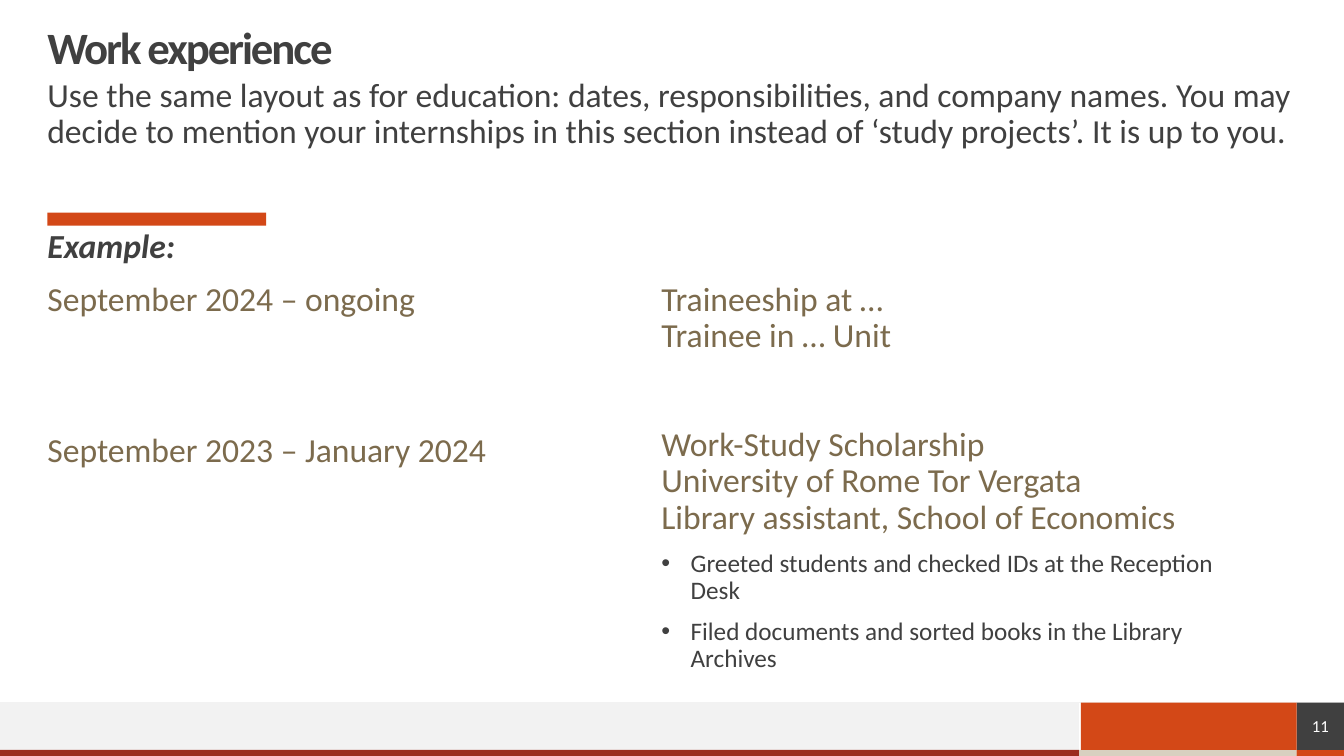
from dataclasses import dataclass, field

import pptx
import pptx.dml.color
import pptx.enum.shapes
import pptx.enum.text
import pptx.oxml
import pptx.oxml.ns
import pptx.util

RGB = pptx.dml.color.RGBColor
ALIGN = pptx.enum.text.PP_ALIGN
ANCHOR = pptx.enum.text.MSO_ANCHOR

ORANGE = RGB(0xD3, 0x48, 0x17)
BRICK = RGB(0x9B, 0x2D, 0x1F)
SAND = RGB(0xD8, 0xD0, 0xC0)
MIST = RGB(0xF2, 0xF2, 0xF2)
CHARCOAL = RGB(0x40, 0x40, 0x40)
UMBER = RGB(0x7C, 0x6B, 0x4D)
WHITE = RGB(0xFF, 0xFF, 0xFF)

EMU_PER_PX = 9144
SLIDE_WIDTH, SLIDE_HEIGHT = 1333, 750
MARGIN = 47
FOOTER_TOP, STRIP_TOP = 697, 744
FOOTER_HEIGHT, STRIP_HEIGHT = STRIP_TOP - FOOTER_TOP, SLIDE_HEIGHT - STRIP_TOP
BAND_END, NUMBER_LEFT = 1070, 1286
BULLET_INDENT = 29


@dataclass(frozen=True)
class Box:
    left: int
    top: int
    width: int
    height: int


@dataclass(frozen=True)
class Block:
    box: Box
    color: RGB


@dataclass(frozen=True)
class Line:
    text: str
    color: RGB = UMBER
    size: int = 24
    before: int = 0
    bullet: bool = False
    tracking: int = 0
    line_spacing: float = 0.9
    align: ALIGN = ALIGN.LEFT
    style: dict[str, bool] = field(default_factory=dict)


@dataclass(frozen=True)
class Passage:
    box: Box
    lines: list[Line]
    anchor: ANCHOR = ANCHOR.TOP


def px(length: int) -> pptx.util.Emu:
    return pptx.util.Emu(length * EMU_PER_PX)


def place(box: Box) -> tuple[pptx.util.Emu, ...]:
    return px(box.left), px(box.top), px(box.width), px(box.height)


def apply(target: object, values: dict[str, object]) -> None:
    for name, value in values.items():
        setattr(target, name, value)


def draw_block(slide: pptx.slide.Slide, block: Block) -> None:
    rectangle = slide.shapes.add_shape(
        pptx.enum.shapes.MSO_SHAPE.RECTANGLE, *place(block.box)
    )
    rectangle.shadow.inherit = False
    rectangle.fill.solid()
    rectangle.fill.fore_color.rgb = block.color
    rectangle.line.fill.background()


def draw_footer_rule(slide: pptx.slide.Slide) -> None:
    rule = slide.shapes.add_connector(
        pptx.enum.shapes.MSO_CONNECTOR.STRAIGHT,
        px(SLIDE_WIDTH), px(FOOTER_TOP), px(0), px(FOOTER_TOP),
    )
    rule.line.color.rgb = MIST
    rule.line.width = pptx.util.Pt(0.5)
    properties = rule._element.spPr
    properties.append(properties.makeelement(pptx.oxml.ns.qn("a:effectLst"), {}))


def add_bullet(paragraph: pptx.text.text._Paragraph) -> None:
    properties = paragraph._p.get_or_add_pPr()
    properties.set("marL", str(px(BULLET_INDENT)))
    properties.set("indent", str(px(-BULLET_INDENT)))
    for tag, key, value in (("a:buFont", "typeface", "Arial"), ("a:buChar", "char", "•")):
        properties.append(
            properties.makeelement(pptx.oxml.ns.qn(tag), {key: value})
        )


def write_passage(slide: pptx.slide.Slide, passage: Passage) -> None:
    frame = slide.shapes.add_textbox(*place(passage.box)).text_frame
    apply(frame, {
        "word_wrap": True,
        "vertical_anchor": passage.anchor,
        "margin_left": 0,
        "margin_top": 0,
        "margin_right": 0,
        "margin_bottom": 0,
    })
    for index, line in enumerate(passage.lines):
        paragraph = frame.add_paragraph() if index else frame.paragraphs[0]
        apply(paragraph, {
            "alignment": line.align,
            "line_spacing": line.line_spacing,
            "space_before": pptx.util.Pt(line.before),
        })
        if line.bullet:
            add_bullet(paragraph)
        run = paragraph.add_run()
        run.text = line.text
        apply(run.font, {"name": "Calibri", "size": pptx.util.Pt(line.size), **line.style})
        run.font.color.rgb = line.color
        if line.tracking:
            run._r.get_or_add_rPr().set("spc", str(line.tracking))


FOOTER_BAND = Block(Box(0, FOOTER_TOP, BAND_END, FOOTER_HEIGHT), MIST)
NUMBER_BOX = Box(NUMBER_LEFT, FOOTER_TOP, SLIDE_WIDTH - NUMBER_LEFT, FOOTER_HEIGHT)
BLOCKS = [
    Block(Box(BAND_END, STRIP_TOP, NUMBER_LEFT - BAND_END, STRIP_HEIGHT), SAND),
    Block(Box(0, STRIP_TOP, BAND_END, STRIP_HEIGHT), BRICK),
    Block(Box(NUMBER_LEFT, STRIP_TOP, SLIDE_WIDTH - NUMBER_LEFT, STRIP_HEIGHT), ORANGE),
    Block(Box(MARGIN, 211, 217, 13), ORANGE),
    Block(NUMBER_BOX, CHARCOAL),
    Block(Box(1072, FOOTER_TOP, NUMBER_LEFT - 1072, FOOTER_HEIGHT), ORANGE),
]

PASSAGES = [
    Passage(
        Box(MARGIN, 26, 1240, 47),
        [Line("Work experience", CHARCOAL, 32, tracking=-150, style={"bold": True})],
        ANCHOR.MIDDLE,
    ),
    Passage(
        Box(MARGIN, 78, 1240, 110),
        [Line(
            "Use the same layout as for education: dates, responsibilities, and company "
            "names. You may decide to mention your internships in this section instead "
            "of ‘study projects’. It is up to you.",
            CHARCOAL,
        )],
    ),
    Passage(
        Box(MARGIN, 228, 598, 39),
        [Line("Example:", CHARCOAL, style={"bold": True, "italic": True})],
    ),
    Passage(
        Box(MARGIN, 280, 608, 296),
        [Line("September 2024 – ongoing"), Line("September 2023 – January 2024", before=82)],
    ),
    Passage(
        Box(656, 280, 598, 367),
        [
            Line("Traineeship at …"),
            Line("Trainee in … Unit"),
            Line("Work-Study Scholarship", before=52),
            Line("University of Rome Tor Vergata"),
            Line("Library assistant, School of Economics"),
            *(
                Line(duty, CHARCOAL, 18, before=10, bullet=True)
                for duty in (
                    "Greeted students and checked IDs at the Reception Desk",
                    "Filed documents and sorted books in the Library Archives",
                )
            ),
        ],
    ),
    Passage(
        NUMBER_BOX,
        [Line("11", WHITE, 12, line_spacing=1.0, align=ALIGN.CENTER)],
        ANCHOR.MIDDLE,
    ),
]


def main() -> None:
    deck = pptx.Presentation()
    apply(deck, {"slide_width": px(SLIDE_WIDTH), "slide_height": px(SLIDE_HEIGHT)})
    slide = deck.slides.add_slide(deck.slide_layouts[6])
    draw_block(slide, FOOTER_BAND)
    draw_footer_rule(slide)
    for block in BLOCKS:
        draw_block(slide, block)
    for passage in PASSAGES:
        write_passage(slide, passage)
    deck.save("out.pptx")


if __name__ == "__main__":
    main()
